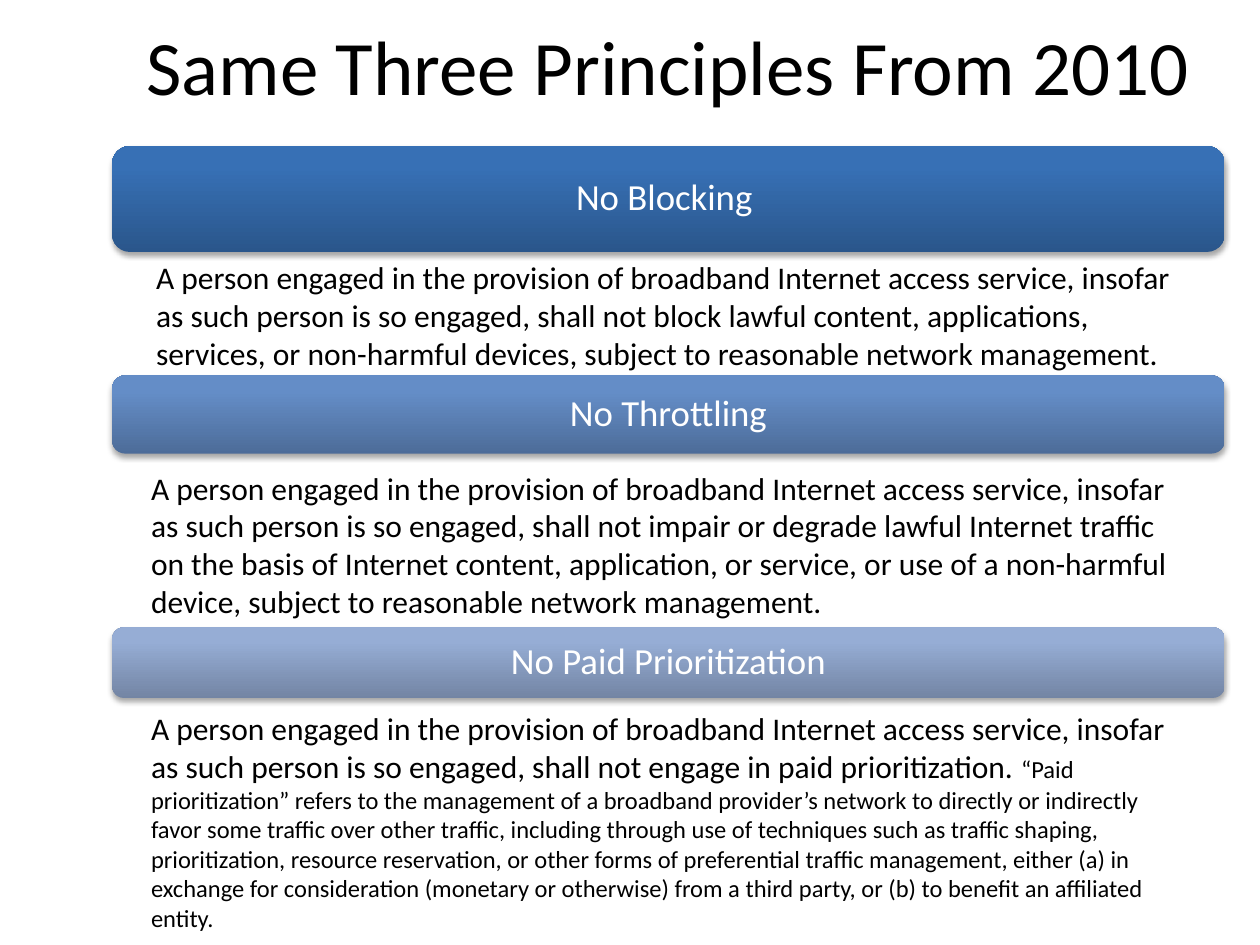
from lxml import etree
from pptx import Presentation, util as u
from pptx.dml.color import RGBColor
from pptx.enum import shapes, text
from pptx.oxml.ns import qn

Inches = u.Inches


def color(code):
    return RGBColor.from_string(code)


def write(box, runs, hue="000000", align=None, **frame):
    """Add a text box; runs are (words, size) pairs in one paragraph."""
    tf = page.shapes.add_textbox(*map(Inches, box)).text_frame
    for key, val in dict(word_wrap=True, **frame).items():
        setattr(tf, key, val)
    par = tf.paragraphs[0]
    par.alignment = align
    for words, size in runs:
        run = par.add_run()
        run.text = words
        for key, val in {"name": "Calibri", "size": u.Pt(size)}.items():
            setattr(run.font, key, val)
        run.font.color.rgb = color(hue)
    return par


deck = Presentation()
deck.slide_width, deck.slide_height = Inches(10), Inches(7.5)
page = deck.slides.add_slide(deck.slide_layouts[6])
mid = {"align": text.PP_ALIGN.CENTER,
       "vertical_anchor": text.MSO_ANCHOR.MIDDLE}
left, wide = 0.89, 8.83

# Title
write((left, 0.03, wide, 0.97), [("Same Three Principles From 2010", 44)], **mid)

# Bars: label, top, height, inset, gradient from bottom to top
bars = [
    ("No Blocking ", 1.16, 0.84, 0.04, ("2A568B", "3770B5", "3570B8")),
    ("No Throttling", 2.98, 0.62, 0.03, ("4D6C99", "648DC7", "638DCA")),
    ("No Paid Prioritization", 4.98, 0.56, 0.03, ("7385A4", "96ADD5", "95ADD7")),
]
for label, top, high, pad, hues in bars:
    bar = page.shapes.add_shape(shapes.MSO_SHAPE.ROUNDED_RECTANGLE,
                                *map(Inches, (left, top, wide, high)))
    bar.line.fill.background()

    # Three-stop gradient
    bar.fill.gradient()
    bar.fill.gradient_angle = 90
    stops = bar.element.spPr.find(".//" + qn("a:gsLst"))
    for old in list(stops):
        stops.remove(old)
    for pos, hue in zip((0, 80, 100), hues):
        stop = etree.SubElement(stops, qn("a:gs"), pos=str(pos * 1000))
        etree.SubElement(stop, qn("a:srgbClr"), val=hue)

    # Soft shadow below
    bar.shadow.inherit = False
    glow = etree.SubElement(
        bar.element.spPr.find(qn("a:effectLst")), qn("a:outerShdw"),
        blurRad=str(u.Pt(3.1)), dist=str(u.Pt(1.8)), dir="5400000",
        rotWithShape="0")
    tint = etree.SubElement(glow, qn("a:srgbClr"), val="000000")
    etree.SubElement(tint, qn("a:alpha"), val="35000")

    # Label
    edges = {"margin_" + side: Inches(0.09)
             for side in ("left", "right", "top", "bottom")}
    par = write((left + pad, top + pad, wide - 2 * pad, high - 2 * pad),
                [(label, 21)], "FFFFFF", **mid, **edges)
    par.line_spacing = 0.9

# Rule texts, which share their opening words
lead = ("A person engaged in the provision of broadband Internet access "
        "service, insofar as such person is so engaged, shall not ")
rules = [
    (1.14, 2, 1.01, [
        (lead + "block lawful content, applications, services, or non-harmful "
         "devices, subject to reasonable network management.", 18)]),
    (1.1, 3.67, 1.31, [
        (lead + "impair or degrade lawful Internet traffic on the basis of "
         "Internet content, application, or service, or use of a non-harmful "
         "device, subject to reasonable network management.", 18)]),
    (1.1, 5.58, 1.88, [
        (lead + "engage in paid prioritization. ", 18),
        ("“Paid prioritization” refers to the management of a broadband "
         "provider’s network to directly or indirectly favor some traffic over "
         "other traffic, including through use of techniques such as traffic "
         "shaping, prioritization, resource reservation, or other forms of "
         "preferential traffic management, either (a) in exchange for "
         "consideration (monetary or otherwise) from a third party, or (b) to "
         "benefit an affiliated entity.", 14)]),
]
for x, top, high, runs in rules:
    write((x, top, 8.42, high), runs,
          auto_size=text.MSO_AUTO_SIZE.SHAPE_TO_FIT_TEXT)

deck.save("out.pptx")
